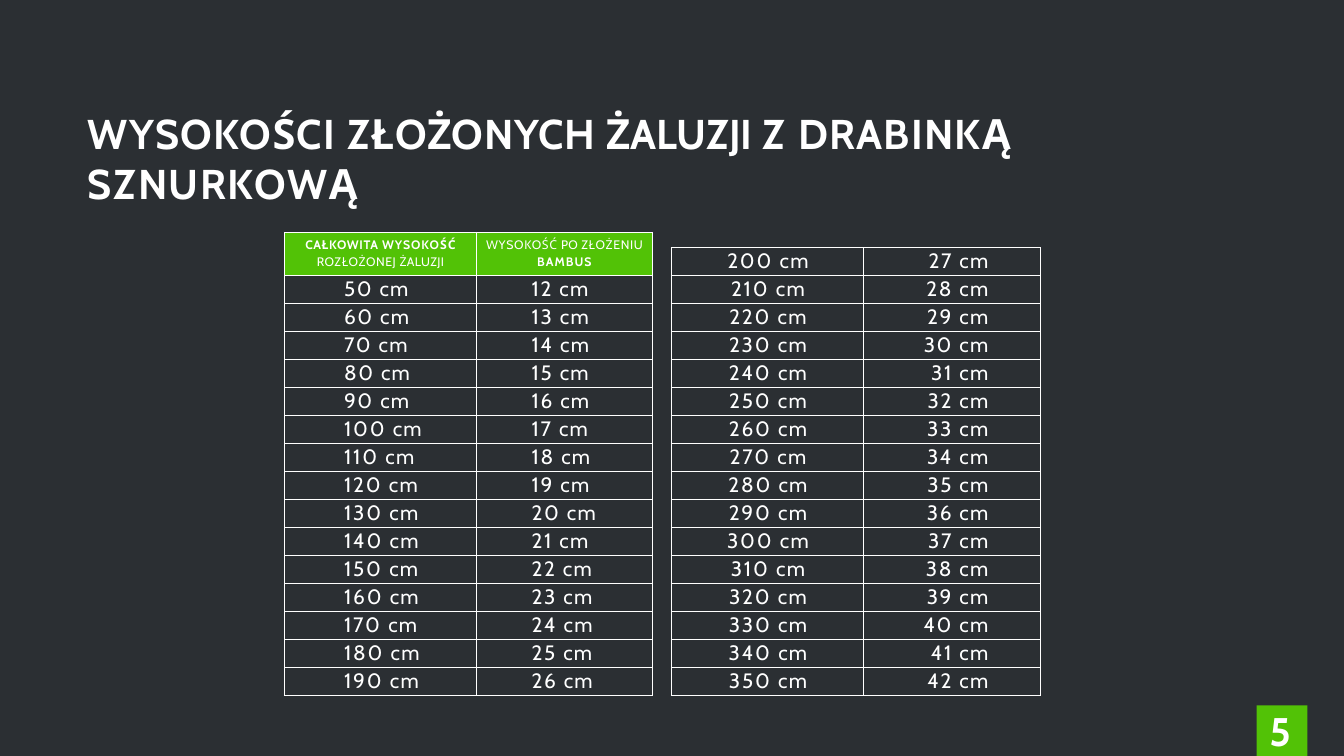
"""Build the slide listing folded blind heights for ladder-cord blinds."""
import dataclasses

import lxml.etree
import pptx
import pptx.dml.color
import pptx.enum.shapes
import pptx.enum.text
import pptx.oxml.ns
import pptx.util

Inches = pptx.util.Inches
Pt = pptx.util.Pt
Align = pptx.enum.text.PP_ALIGN
Anchor = pptx.enum.text.MSO_ANCHOR


@dataclasses.dataclass(frozen=True)
class Theme:
    font: str = "Cabin"
    dark: str = "2B2F33"
    green: str = "52C206"
    white: str = "FFFFFF"
    title_size: float = 49
    number_size: float = 47
    body_size: float = 24.5
    header_size: float = 14.5
    border: float = 1


THEME = Theme()
TITLE = [("WYSOKOŚCI ", 1.6), ("ZŁOŻONYCH ", 0.8), ("ŻALUZJI ", 0),
         ("Z ", 2.5), ("DRABINKĄ ", 1.5), ("SZNURKOWĄ", 1.9)]
HEADERS = [
    [(True, [("CAŁKOWITA ", 0.7), ("WYSOKOŚĆ", 1.1)]),
     (False, [("ROZŁOŻONEJ ", 0.6), ("ŻALUZJI", 0.4)])],
    [(False, [("WYSOKOŚĆ ", 0.8), ("PO ", 0.3), ("ZŁOŻENIU", 0.7)]),
     (True, [("BAMBUS", 1.2)])],
]
HEIGHTS = list(zip(range(50, 351, 10), range(12, 43)))
LEFT_COUNT = 15
PAGE_NUMBER = "5"

LEFT_COLUMNS = [(3.13, Align.LEFT, 0.97, 0), (2.89, Align.LEFT, 0.91, 0)]
RIGHT_COLUMNS = [(3.13, Align.CENTER, 0.02, 0), (2.9, Align.RIGHT, 0, 0.85)]
ROW_HEIGHT = Inches(7.33) // 16
HEADER_HEIGHT = Inches(0.71)


def rgb(colour):
    return pptx.dml.color.RGBColor.from_string(colour)


def paint(fill, colour):
    fill.solid()
    fill.fore_color.rgb = rgb(colour)


def write(paragraph, words, size, bold=False, align=Align.LEFT):
    paragraph.alignment = align
    font = paragraph.font
    font.name, font.size, font.bold = THEME.font, Pt(size), bold
    font.color.rgb = rgb(THEME.white)
    for word, spacing in words:
        run = paragraph.add_run()
        run.text = word
        run._r.get_or_add_rPr().set("spc", str(round(spacing * 100)))


def set_insets(area, left=0, top=0, right=0):
    area.margin_left, area.margin_top = Inches(left), Inches(top)
    area.margin_right, area.margin_bottom = Inches(right), 0


def format_cell(cell, colour):
    paint(cell.fill, colour)
    properties = cell._tc.get_or_add_tcPr()
    for place, side in enumerate(("lnL", "lnR", "lnT", "lnB")):
        line = lxml.etree.Element(pptx.oxml.ns.qn("a:" + side), w=str(Pt(THEME.border)))
        solid = lxml.etree.SubElement(line, pptx.oxml.ns.qn("a:solidFill"))
        lxml.etree.SubElement(solid, pptx.oxml.ns.qn("a:srgbClr"), val=THEME.white)
        properties.insert(place, line)


def fill_header(cell, lines):
    format_cell(cell, THEME.green)
    set_insets(cell, top=0.08)
    frame = cell.text_frame
    for place, (bold, words) in enumerate(lines):
        paragraph = frame.add_paragraph() if place else frame.paragraphs[0]
        if place:
            paragraph.space_before = Pt(2.9)
        write(paragraph, words, THEME.header_size, bold, Align.CENTER)


def add_heights(slide, left, top, columns, heights, headers=()):
    offset = 1 if headers else 0
    total = ROW_HEIGHT * len(heights) + HEADER_HEIGHT * offset
    width = Inches(sum(column[0] for column in columns))
    table = slide.shapes.add_table(len(heights) + offset, len(columns),
                                   left, top, width, total).table
    table.first_row = table.horz_banding = False
    for row in table.rows:
        row.height = ROW_HEIGHT
    if headers:
        table.rows[0].height = HEADER_HEIGHT
    for c, (column_width, align, left_inset, right_inset) in enumerate(columns):
        table.columns[c].width = Inches(column_width)
        if headers:
            fill_header(table.cell(0, c), headers[c])
        for r, pair in enumerate(heights, offset):
            cell = table.cell(r, c)
            format_cell(cell, THEME.dark)
            set_insets(cell, left_inset, 0.02, right_inset)
            spacing = 2.1 if pair[c] >= 100 else 1.9
            write(cell.text_frame.paragraphs[0], [(f"{pair[c]} ", spacing), ("cm", 1.4)],
                  THEME.body_size, align=align)


def add_title(slide):
    title = slide.shapes.title
    title.left, title.top = Inches(1.43), Inches(1.75)
    title.width, title.height = Inches(19.11), Inches(0.84)
    frame = title.text_frame
    frame.auto_size = pptx.enum.text.MSO_AUTO_SIZE.NONE
    frame.word_wrap = True
    frame.vertical_anchor = Anchor.TOP
    set_insets(frame, left=0.01, top=0.01)
    write(frame.paragraphs[0], TITLE, THEME.title_size, bold=True)


def add_page_number(slide):
    side = Inches(0.83)
    badge = slide.shapes.add_shape(pptx.enum.shapes.MSO_SHAPE.RECTANGLE,
                                   Inches(20.56), Inches(11.54), side, side)
    badge.shadow.inherit = False
    paint(badge.fill, THEME.green)
    badge.line.fill.background()
    frame = badge.text_frame
    frame.vertical_anchor = Anchor.TOP
    set_insets(frame, left=0.21, top=0.04)
    frame.paragraphs[0].line_spacing = Pt(54.7)
    write(frame.paragraphs[0], [(PAGE_NUMBER, -0.1)], THEME.number_size, bold=True)


def main():
    deck = pptx.Presentation()
    deck.slide_width, deck.slide_height = Inches(21.99), Inches(12.37)
    slide = deck.slides.add_slide(deck.slide_layouts[5])
    paint(slide.background.fill, THEME.dark)
    add_title(slide)
    add_heights(slide, Inches(10.99), Inches(4.05), RIGHT_COLUMNS, HEIGHTS[LEFT_COUNT:])
    add_heights(slide, Inches(4.66), Inches(3.8), LEFT_COLUMNS, HEIGHTS[:LEFT_COUNT], HEADERS)
    add_page_number(slide)
    deck.save("out.pptx")


if __name__ == "__main__":
    main()
